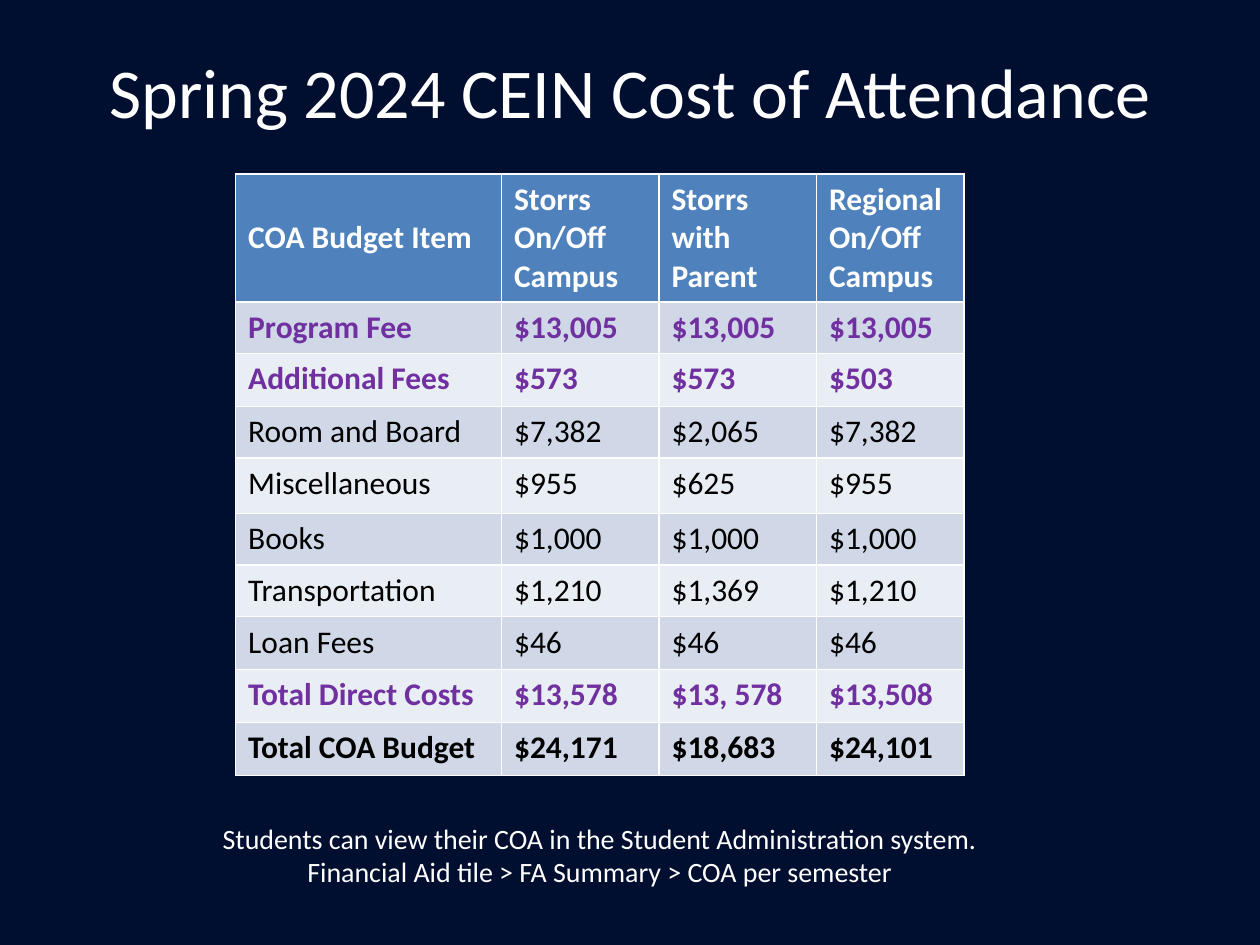
from dataclasses import dataclass

from pptx import Presentation
from pptx.dml.color import RGBColor as RGB
from pptx.enum.text import MSO_ANCHOR as Anchor, PP_ALIGN as Align
from pptx.util import Inches, Pt

FONT = "Calibri"
COLORS = {
    "navy": "000E2F", "white": "FFFFFF", "black": "000000", "purple": "7030A0",
    "head": "4F81BD", "dark": "D0D8E8", "light": "E9EDF4",
}


@dataclass
class Row:
    height: float
    cells: tuple[str, ...]
    color: str = "black"
    bold: bool = False


COLS = (2.11, 1.25, 1.25, 1.17)
ROWS = (
    Row(1.01, ("COA Budget Item", "Storrs\nOn/Off\nCampus", "Storrs with Parent",
               "Regional On/Off\nCampus"), "white", True),
    Row(0.41, ("Program Fee", "$13,005", "$13,005", "$13,005"), "purple", True),
    Row(0.42, ("Additional Fees", "$573", "$573", "$503"), "purple", True),
    Row(0.41, ("Room and Board", "$7,382", "$2,065", "$7,382")),
    Row(0.44, ("Miscellaneous", "$955", "$625", "$955")),
    Row(0.41, ("Books", "$1,000", "$1,000", "$1,000")),
    Row(0.41, ("Transportation", "$1,210", "$1,369", "$1,210")),
    Row(0.42, ("Loan Fees", "$46", "$46", "$46")),
    Row(0.42, ("Total Direct Costs", "$13,578", "$13, 578", "$13,508"), "purple", True),
    Row(0.42, ("Total COA Budget", "$24,171", "$18,683", "$24,101"), "black", True),
)


def tint(name: str) -> RGB:
    return RGB.from_string(COLORS[name])


def style(frame, size: float, color: str, bold: bool = False, align=Align.LEFT) -> None:
    for par in frame.paragraphs:
        par.alignment = align
        for run in par.runs:
            font = run.font
            font.name, font.size, font.bold = FONT, Pt(size), bold
            font.color.rgb = tint(color)


def add_costs(slide) -> None:
    # The default table style supplies the white rules
    table = slide.shapes.add_table(
        len(ROWS), len(COLS), Inches(1.87), Inches(1.38),
        Inches(sum(COLS)), Inches(sum(row.height for row in ROWS))).table
    for col, width in zip(table.columns, COLS):
        col.width = Inches(width)
    for i, row in enumerate(ROWS):
        table.rows[i].height = Inches(row.height)
        fill = "head" if i == 0 else "dark" if i % 2 else "light"
        for cell, text in zip(table.rows[i].cells, row.cells):
            cell.text_frame.text = text
            cell.fill.solid()
            cell.fill.fore_color.rgb = tint(fill)
            if i == 0:
                cell.vertical_anchor = Anchor.MIDDLE
            style(cell.text_frame, 18, row.color, row.bold)


def main() -> None:
    deck = Presentation()
    deck.slide_width, deck.slide_height = Inches(10), Inches(7.5)
    slide = deck.slides.add_slide(deck.slide_layouts[5])
    slide.background.fill.solid()
    slide.background.fill.fore_color.rgb = tint("navy")

    # Title
    title = slide.shapes.title
    title.left, title.top = Inches(0.5), Inches(0.18)
    title.width, title.height = Inches(9), Inches(1.08)
    title.text_frame.text = "Spring 2024 CEIN Cost of Attendance"
    title.text_frame.vertical_anchor = Anchor.MIDDLE
    style(title.text_frame, 40, "white", align=Align.CENTER)

    # Cost table
    add_costs(slide)

    # Note below the table
    note = slide.shapes.add_textbox(
        Inches(1.19), Inches(6.47), Inches(7.14), Inches(0.64)).text_frame
    note.word_wrap = True
    note.text = ("Students can view their COA in the Student Administration system.\n"
                 "Financial Aid tile > FA Summary > COA per semester")
    style(note, 16, "white", align=Align.CENTER)

    deck.save("out.pptx")


if __name__ == "__main__":
    main()
